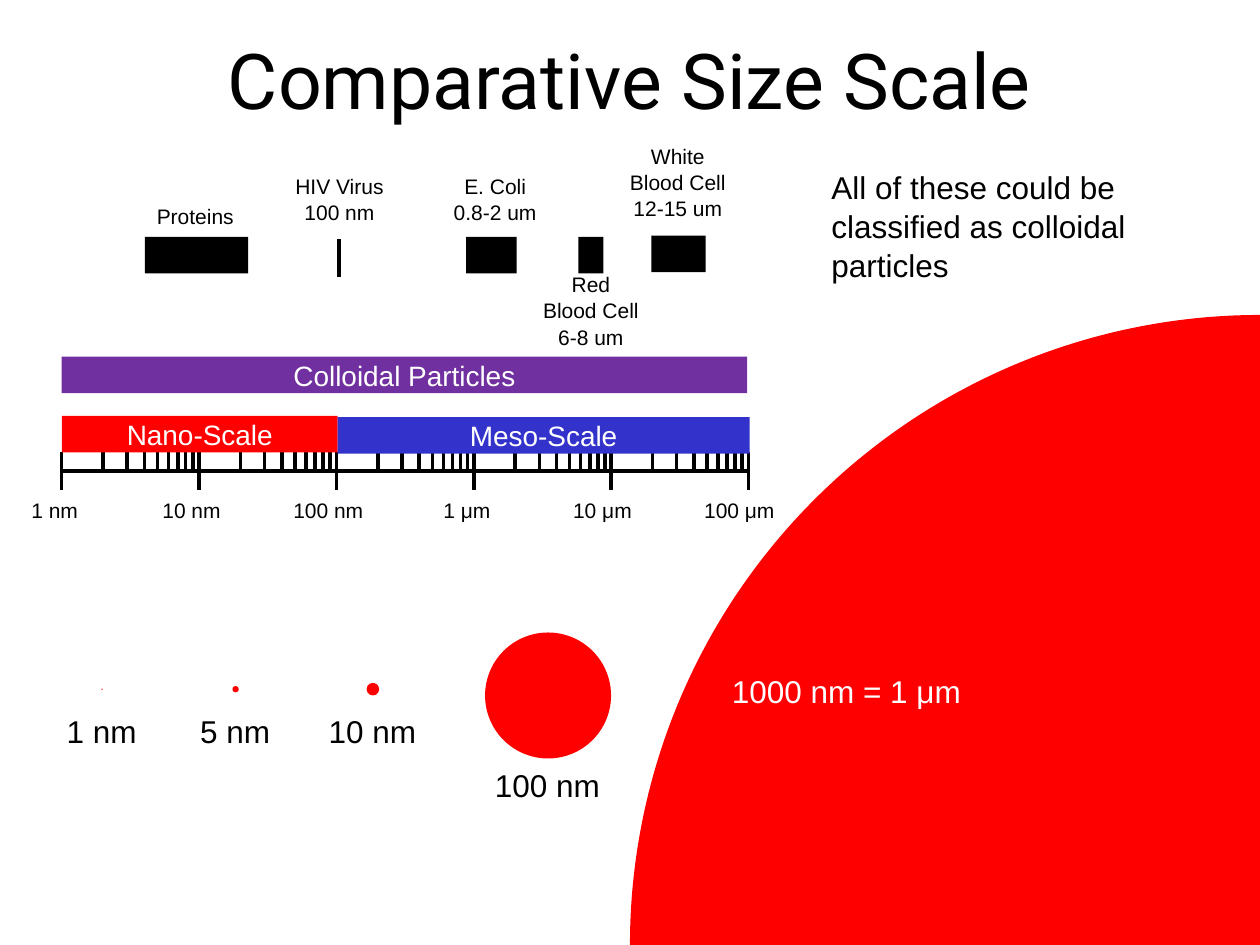
from math import log10

from lxml import etree
from pptx import Presentation
from pptx.dml.color import RGBColor
from pptx.enum.shapes import MSO_CONNECTOR, MSO_SHAPE
from pptx.enum.text import MSO_ANCHOR, MSO_AUTO_SIZE, PP_ALIGN
from pptx.oxml.ns import qn
from pptx.util import Inches, Pt

RECT, OVAL, PIE = MSO_SHAPE.RECTANGLE, MSO_SHAPE.OVAL, MSO_SHAPE.PIE
LEFT, CENTER = PP_ALIGN.LEFT, PP_ALIGN.CENTER
MIDDLE = MSO_ANCHOR.MIDDLE
FIT = MSO_AUTO_SIZE.SHAPE_TO_FIT_TEXT
STRAIGHT = MSO_CONNECTOR.STRAIGHT

COLORS = {"black": "000000", "white": "FFFFFF", "red": "FF0000",
          "blue": "3333CC", "purple": "7030A0"}

TITLE = "Comparative Size Scale"
NOTE = "All of these could be classified as colloidal particles"

# Scale label, left, width
UNITS = [("1 nm", 0.15, 0.68), ("10 nm", 1.19, 0.79), ("100 nm", 2.23, 0.9),
         ("1 μm", 3.42, 0.68), ("10 μm", 4.45, 0.79), ("100 μm", 5.49, 0.9)]

# Band name, color, left, top, width
BANDS = [("Nano-Scale", "red", 0.49, 3.3, 2.19),
         ("Meso-Scale", "blue", 2.68, 3.31, 3.27),
         ("Colloidal Particles", "purple", 0.49, 2.83, 5.44)]

# Left, top, width of each size range
RANGES = [(1.15, 1.88, 0.82), (3.7, 1.88, 0.4),
          (4.59, 1.88, 0.2), (5.17, 1.87, 0.43)]

# Example name, left, top, width, height
NAMES = [("Proteins", 1.07, 1.56, 0.96, 0.36),
         ("HIV Virus\n100 nm", 2.16, 1.32, 1.07, 0.6),
         ("E. Coli\n0.8-2 um", 3.42, 1.32, 1.02, 0.6),
         ("Red\nBlood Cell\n6-8 um", 4.12, 2.1, 1.14, 0.83),
         ("White\nBlood Cell\n12-15 um", 4.81, 1.08, 1.14, 0.83)]

# Diameter in nm, center x, center y, label top, label width
DOTS = [(100, 4.35, 5.52, 6.02, 1.04), (10, 2.96, 5.47, 5.59, 0.9),
        (5, 1.87, 5.47, 5.59, 0.76), (1, 0.81, 5.47, 5.59, 0.76)]

AXIS_X, AXIS_Y, DECADE, TICK = 0.49, 3.74, 1.09, 0.15
BAR_H = 0.29

prs = Presentation()
prs.slide_width, prs.slide_height = Inches(10), Inches(7.5)
slide = prs.slides.add_slide(prs.slide_layouts[5])
shapes = slide.shapes


def rgb(name):
    return RGBColor.from_string(COLORS[name])


def write(frame, text, size, color="black", align=LEFT, font="Arial"):
    frame.text = text
    for para in frame.paragraphs:
        para.alignment = align
        for run in para.runs:
            run.font.size = Pt(size)
            run.font.name = font
            run.font.color.rgb = rgb(color)


def label(text, x, y, w, h, size, color="black", align=LEFT, wrap=False):
    box = shapes.add_textbox(Inches(x), Inches(y), Inches(w), Inches(h))
    frame = box.text_frame
    frame.word_wrap = wrap
    frame.auto_size = FIT
    write(frame, text, size, color, align)
    for para in frame.paragraphs:
        para.line_spacing = 1.04


def solid(kind, x, y, w, h, color):
    shape = shapes.add_shape(kind, Inches(x), Inches(y), Inches(w), Inches(h))
    shape.shadow.inherit = False
    shape.fill.solid()
    shape.fill.fore_color.rgb = rgb(color)
    shape.line.fill.background()
    return shape


def rule(x1, y1, x2, y2):
    line = shapes.add_connector(STRAIGHT, Inches(x1), Inches(y1),
                                Inches(x2), Inches(y2))
    line.line.width = Pt(2)
    line.line.color.rgb = rgb("black")
    etree.SubElement(line._element.spPr, qn("a:effectLst"))


title = shapes.title
title.left, title.top = Inches(0.5), Inches(0)
title.width, title.height = Inches(9), Inches(1.25)
title.text_frame.vertical_anchor = MIDDLE
write(title.text_frame, TITLE, 44, align=CENTER, font="Roboto")

# Logarithmic scale: long ticks at each power of ten, short ones at 2 to 9
last = len(UNITS) - 1
rule(AXIS_X, AXIS_Y, AXIS_X + last * DECADE, AXIS_Y)
for i, (unit, left, width) in enumerate(UNITS):
    x = AXIS_X + i * DECADE
    rule(x, AXIS_Y - TICK, x, AXIS_Y + TICK)
    if i < last:
        for n in range(2, 10):
            minor = x + DECADE * log10(n)
            rule(minor, AXIS_Y - TICK, minor, AXIS_Y)
    label(unit, left, AXIS_Y + TICK, width, 0.36, 12)

for name, color, x, y, w in BANDS:
    band = solid(RECT, x, y, w, BAR_H, color)
    band.text_frame.vertical_anchor = MIDDLE
    write(band.text_frame, name, 16, "white", CENTER)

for x, y, w in RANGES:
    solid(RECT, x, y, w, BAR_H, "black")
rule(2.69, 1.9, 2.69, 2.2)
for name, x, y, w, h in NAMES:
    label(name, x, y, w, h, 12, align=CENTER)

# Circles drawn at one inch per 100 nm
for nm, x, y, top, w in DOTS:
    d = nm / 100
    solid(OVAL, x - d / 2, y - d / 2, d, d, "red")
    label(f"{nm} nm", x - w / 2, top, w, 0.4, 18)

micron = solid(PIE, 5, 2.5, 10, 10, "red")
micron.adjustments[0] = 108
micron.adjustments[1] = 162
label("1000 nm = 1 μm", 5.71, 5.27, 2.04, 0.4, 18, "white")
label(NOTE, 6.5, 1.27, 3.26, 1.01, 18, wrap=True)

prs.save("out.pptx")
